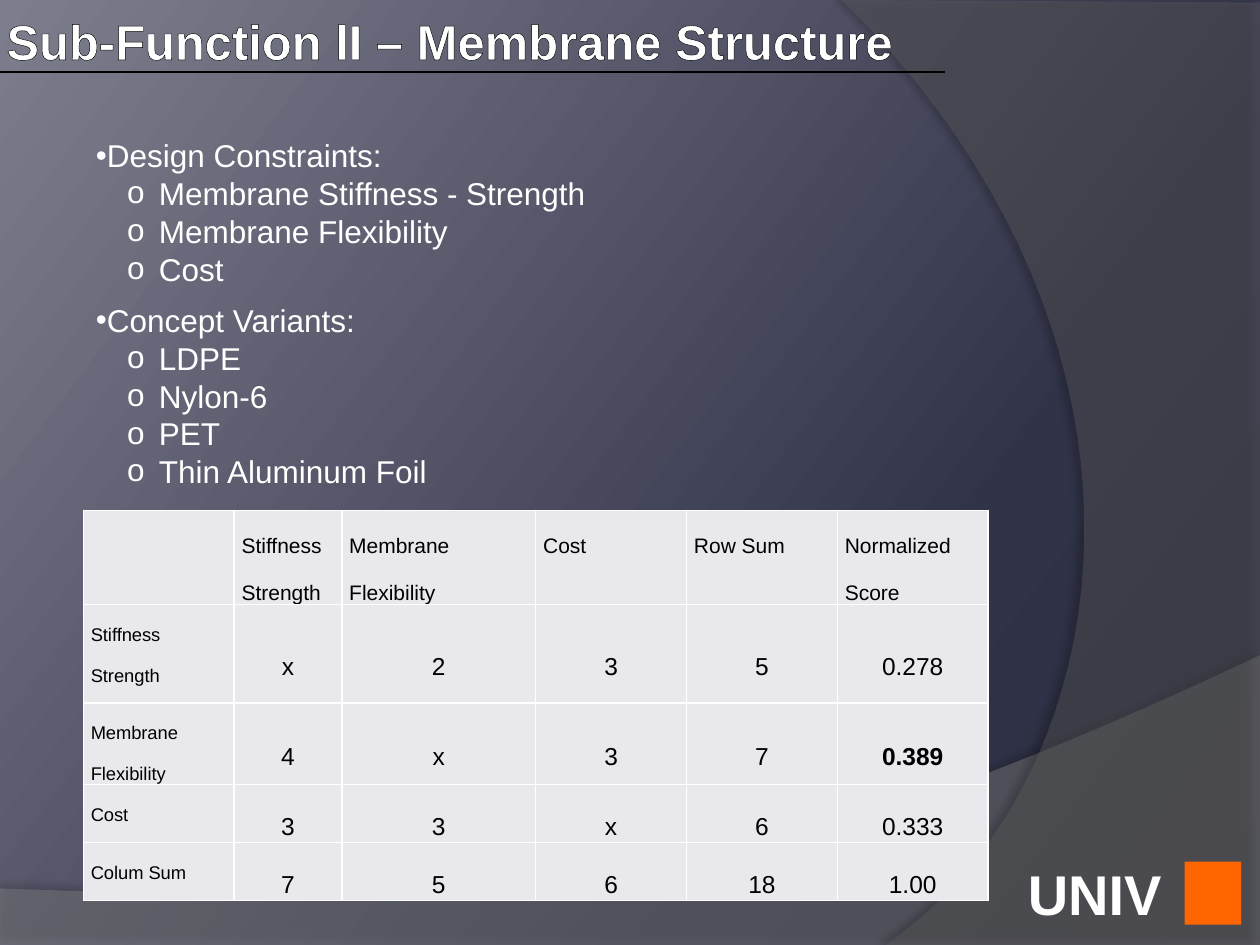
from copy import deepcopy
from dataclasses import dataclass

from lxml.etree import SubElement
from pptx import Presentation
from pptx.dml.color import RGBColor
from pptx.enum.shapes import MSO_CONNECTOR, MSO_SHAPE
from pptx.enum.text import MSO_ANCHOR, MSO_AUTO_SIZE, PP_ALIGN
from pptx.oxml.ns import qn
from pptx.util import Cm, Pt


@dataclass(frozen=True)
class Theme:
    font: str = "Arial"
    white: str = "FFFFFF"
    black: str = "000000"
    cell: str = "E9E9ED"
    emblem: str = "FF6600"
    gradient: tuple = ((0, "292B3D"), (0.3, "313349"), (1, "7D7E8D"))
    title_size: float = 28
    list_size: float = 18
    list_leading: float = 21.6
    header_size: float = 12
    label_size: float = 10.5
    value_size: float = 14
    mark_size: float = 32


@dataclass(frozen=True)
class Box:
    """Position and size in centimetres."""
    left: float
    top: float
    width: float
    height: float


@dataclass(frozen=True)
class Sweep:
    """A translucent background area bounded by corners and one Bézier edge."""
    corners: tuple
    curve: tuple
    color: str
    opacity: int
    shadow_opacity: int
    shadow_distance: float
    shadow_angle: int


@dataclass(frozen=True)
class BulletList:
    heading: str
    items: tuple
    box: Box


THEME = Theme()
SWEEPS = (
    Sweep(((0, 17.91), (0, 19.05), (25.4, 19.05)),
          ((25.4, 13.21), (14.2, 18.52), (9.93, 18.26), (0, 17.91)),
          "7F7F7F", 45, 35, 3.5, 270),
    Sweep(((25.4, 0.05), (25.4, 19.05)),
          ((17.86, 19.05), (22.63, 15.72), (24.05, 6.99), (16.97, 0)),
          "5E5E5E", 40, 45, 4, 180),
)
LISTS = (
    BulletList("Design Constraints:",
               ("Membrane Stiffness - Strength", "Membrane Flexibility", "Cost"),
               Box(1.68, 2.62, 11.5, 3.33)),
    BulletList("Concept Variants:",
               ("LDPE", "Nylon-6", "PET", "Thin Aluminum Foil"),
               Box(1.68, 5.94, 10.34, 4.11)),
)
TABLE_ROWS = (
    ("", "Stiffness \nStrength", "Membrane Flexibility", "Cost", "Row Sum", "Normalized Score"),
    ("Stiffness Strength", "x", "2", "3", "5", "0.278"),
    ("Membrane Flexibility", "4", "x", "3", "7", "0.389"),
    ("Cost", "3", "3", "x", "6", "0.333"),
    ("Colum Sum", "7", "5", "6", "18", "1.00"),
)
TABLE_BOX = Box(1.68, 10.29, 18.24, 8.18)
COLUMN_WIDTHS = (3.04, 2.17, 3.91, 3.04, 3.04, 3.04)
ROW_HEIGHTS = (1.55, 1.98, 1.3, 1.17, 1.17)
BEST_SCORE = "0.389"


def lengths(box: Box) -> tuple:
    return Cm(box.left), Cm(box.top), Cm(box.width), Cm(box.height)


def place(shape, box: Box) -> None:
    shape.left, shape.top, shape.width, shape.height = lengths(box)


def format_runs(paragraph, size: float, color: str, bold: bool = False) -> None:
    for run in paragraph.runs:
        run.font.name = THEME.font
        run.font.size = Pt(size)
        run.font.bold = bold
        run.font.color.rgb = RGBColor.from_string(color)


def add_solid_fill(parent, color: str) -> None:
    fill = SubElement(parent, qn("a:solidFill"))
    SubElement(fill, qn("a:srgbClr"), val=color)


def paint_background(slide) -> None:
    fill = slide.background.fill
    fill.gradient()
    fill.gradient_angle = 143
    stop_list = slide.element.find(".//" + qn("a:gsLst"))
    stop_list.append(deepcopy(stop_list[-1]))
    for stop, (position, color) in zip(fill.gradient_stops, THEME.gradient):
        stop.position = position
        stop.color.rgb = RGBColor.from_string(color)


def curve_points(controls: tuple, steps: int = 40) -> list:
    """Points along a cubic Bézier curve."""
    points = []
    for step in range(steps + 1):
        t = step / steps
        weights = ((1 - t) ** 3, 3 * t * (1 - t) ** 2, 3 * t * t * (1 - t), t ** 3)
        points.append(tuple(sum(w * p[axis] for w, p in zip(weights, controls))
                            for axis in (0, 1)))
    return points


def add_sweep(slide, sweep: Sweep, depth: int) -> None:
    """Draw the area behind the placeholders, at the given depth."""
    points = [(Cm(x), Cm(y)) for x, y in (*sweep.corners, *curve_points(sweep.curve))]
    builder = slide.shapes.build_freeform(*points[0])
    builder.add_line_segments(points[1:])
    shape = builder.convert_to_shape()
    shape.fill.solid()
    shape.fill.fore_color.rgb = RGBColor.from_string(sweep.color)
    color = shape.element.spPr.find(".//" + qn("a:srgbClr"))
    SubElement(color, qn("a:alpha"), val=str(sweep.opacity * 1000))
    shape.line.fill.background()
    effects = SubElement(shape.element.spPr, qn("a:effectLst"))
    shadow = SubElement(effects, qn("a:outerShdw"), blurRad=str(Pt(4)),
                        dist=str(Pt(sweep.shadow_distance)),
                        dir=str(sweep.shadow_angle * 60000))
    shadow_color = SubElement(shadow, qn("a:srgbClr"), val=THEME.black)
    SubElement(shadow_color, qn("a:alpha"), val=str(sweep.shadow_opacity * 1000))
    slide.shapes.element.insert(2 + depth, shape.element)


def fill_title(title) -> None:
    place(title, Box(0, 0, 25.15, 1.4))
    frame = title.text_frame
    frame.text = "Sub-Function lI – Membrane Structure"
    frame.auto_size = MSO_AUTO_SIZE.NONE
    frame.vertical_anchor = MSO_ANCHOR.TOP
    frame.margin_left = frame.margin_right = frame.margin_bottom = Cm(0.13)
    frame.margin_top = Cm(0.22)
    paragraph = frame.paragraphs[0]
    paragraph.alignment = PP_ALIGN.LEFT
    format_runs(paragraph, THEME.title_size, THEME.white, bold=True)
    properties = paragraph.runs[0].font._element
    outline = SubElement(properties, qn("a:ln"), w=str(Pt(1)))
    add_solid_fill(outline, THEME.black)
    properties.insert(0, outline)


def set_bullet(paragraph, symbol: str, margin: float, indent: float) -> None:
    properties = paragraph._p.get_or_add_pPr()
    properties.set("marL", str(Cm(margin)))
    properties.set("indent", str(Cm(indent)))
    SubElement(properties, qn("a:buFont"), typeface=THEME.font)
    SubElement(properties, qn("a:buChar"), char=symbol)


def fill_list(placeholder, bullet_list: BulletList) -> None:
    place(placeholder, bullet_list.box)
    frame = placeholder.text_frame
    frame.text = "\n".join((bullet_list.heading, *bullet_list.items))
    frame.auto_size = MSO_AUTO_SIZE.NONE
    for index, paragraph in enumerate(frame.paragraphs):
        paragraph.space_before = Pt(0)
        paragraph.line_spacing = Pt(THEME.list_leading)
        if index:
            paragraph.level = 1
            set_bullet(paragraph, "o", 1.27, -0.64)
        else:
            set_bullet(paragraph, "•", 0, 0)
        format_runs(paragraph, THEME.list_size, THEME.white)


def add_title_rule(slide) -> None:
    rule = slide.shapes.add_connector(MSO_CONNECTOR.STRAIGHT, 0, Cm(1.45), Cm(19.05), Cm(1.45))
    rule.line.color.rgb = RGBColor.from_string(THEME.black)
    rule.line.width = Pt(1.5)
    SubElement(rule._element.spPr, qn("a:effectLst"))


def style_cell(cell, size: float, is_value: bool) -> None:
    cell.margin_left = cell.margin_right = Cm(0.15)
    cell.margin_top = cell.margin_bottom = 0
    cell.vertical_anchor = MSO_ANCHOR.MIDDLE if is_value else MSO_ANCHOR.TOP
    for paragraph in cell.text_frame.paragraphs:
        paragraph.alignment = PP_ALIGN.CENTER if is_value else PP_ALIGN.JUSTIFY
        paragraph.line_spacing = 2.0
        format_runs(paragraph, size, THEME.black, bold=cell.text == BEST_SCORE)
    properties = cell._tc.get_or_add_tcPr()
    for side in ("a:lnL", "a:lnR", "a:lnT", "a:lnB"):
        add_solid_fill(SubElement(properties, qn(side), w=str(Pt(1))), THEME.white)
    cell.fill.solid()
    cell.fill.fore_color.rgb = RGBColor.from_string(THEME.cell)


def add_score_table(slide) -> None:
    table = slide.shapes.add_table(len(TABLE_ROWS), len(COLUMN_WIDTHS), *lengths(TABLE_BOX)).table
    for column, width in zip(table.columns, COLUMN_WIDTHS):
        column.width = Cm(width)
    for row_index, (row, height) in enumerate(zip(TABLE_ROWS, ROW_HEIGHTS)):
        table.rows[row_index].height = Cm(height)
        for column_index, text in enumerate(row):
            cell = table.cell(row_index, column_index)
            cell.text = text
            is_value = row_index > 0 and column_index > 0
            size = (THEME.header_size if row_index == 0
                    else THEME.value_size if is_value else THEME.label_size)
            style_cell(cell, size, is_value)


def add_school_mark(slide) -> None:
    text_box = slide.shapes.add_textbox(*lengths(Box(20.47, 17.2, 3.53, 1.63)))
    frame = text_box.text_frame
    frame.word_wrap = False
    frame.text = "UNIV"
    format_runs(frame.paragraphs[0], THEME.mark_size, THEME.white, bold=True)
    emblem = slide.shapes.add_shape(MSO_SHAPE.RECTANGLE, *lengths(Box(23.88, 17.37, 1.14, 1.27)))
    emblem.shadow.inherit = False
    emblem.fill.solid()
    emblem.fill.fore_color.rgb = RGBColor.from_string(THEME.emblem)
    emblem.line.fill.background()


def main() -> None:
    presentation = Presentation()
    presentation.slide_width, presentation.slide_height = Cm(25.4), Cm(19.05)
    slide = presentation.slides.add_slide(presentation.slide_layouts.get_by_name("Two Content"))
    paint_background(slide)
    for depth, sweep in enumerate(SWEEPS):
        add_sweep(slide, sweep, depth)
    fill_title(slide.shapes.title)
    for index, bullet_list in enumerate(LISTS, start=1):
        fill_list(slide.placeholders[index], bullet_list)
    add_title_rule(slide)
    add_score_table(slide)
    add_school_mark(slide)
    presentation.save("out.pptx")


if __name__ == "__main__":
    main()
